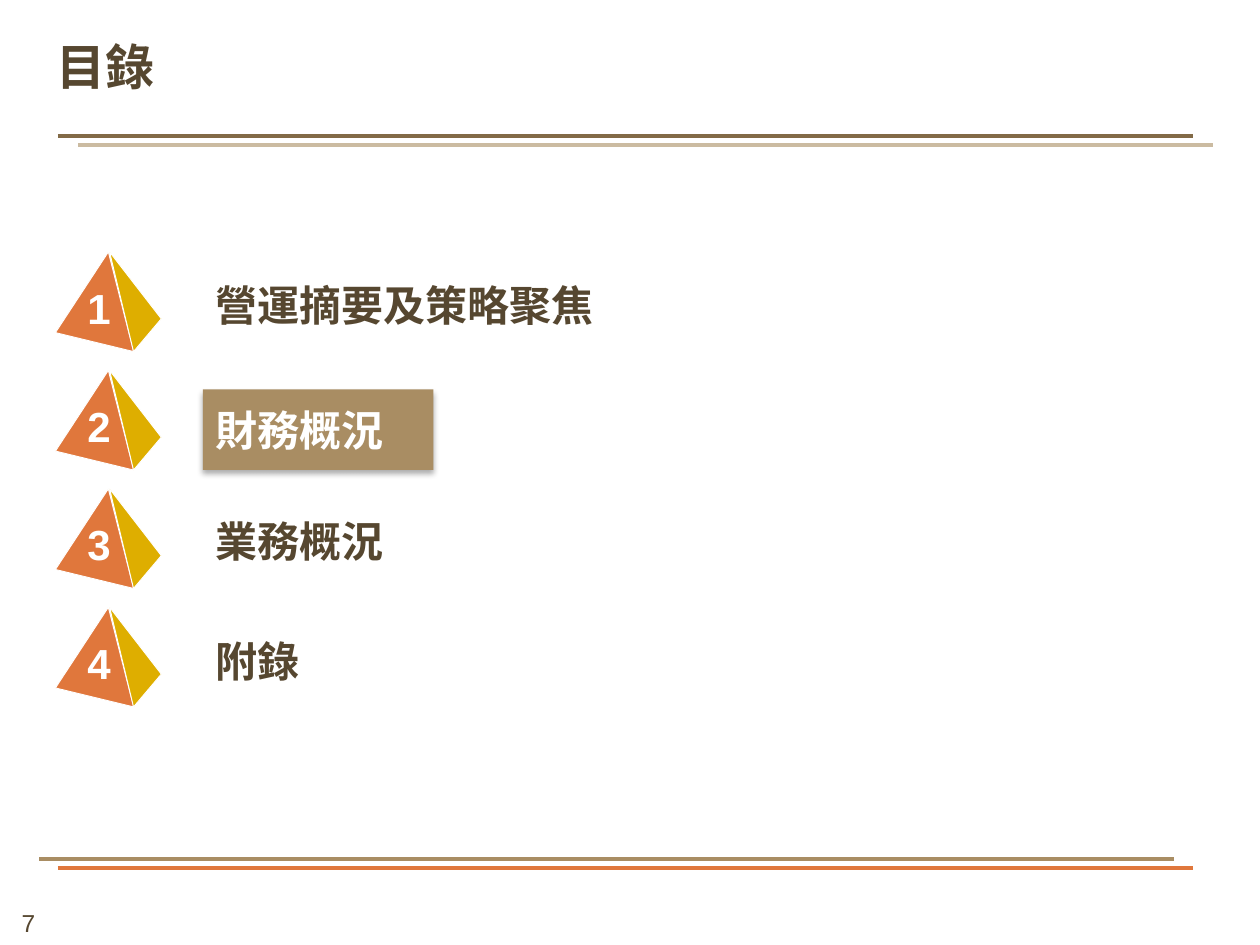
import pptx
import pptx.dml.color
import pptx.enum.shapes
import pptx.enum.text
import pptx.oxml
import pptx.oxml.ns
import pptx.util
from pptx.util import Inches

CJK = "Noto Sans CJK SC"
DARK, TAN, ORANGE, GOLD, WHITE = "564730", "A98D63", "E0773C", "DEAE00", "FFFFFF"
ALIGN = pptx.enum.text.PP_ALIGN
ANCHOR = pptx.enum.text.MSO_ANCHOR
XMLNS = 'xmlns:a="http://schemas.openxmlformats.org/drawingml/2006/main"'
NO_EFFECT = f"<a:effectLst {XMLNS}/>"
SHADOW = (
    f"<a:effectLst {XMLNS}>"
    '<a:outerShdw blurRad="44450" dist="27940" dir="5400000" rotWithShape="0">'
    '<a:srgbClr val="000000"><a:alpha val="32000"/></a:srgbClr>'
    "</a:outerShdw></a:effectLst>"
)


def rgb(color):
    return pptx.dml.color.RGBColor.from_string(color)


def set_text(sp, text, size=24, font=CJK, color=DARK, bold=True, align=ALIGN.LEFT,
             anchor=ANCHOR.MIDDLE, margins=(0.1, 0.05), wrap=True, spacing=None):
    tf = sp.text_frame
    tf.word_wrap = wrap
    tf.auto_size = pptx.enum.text.MSO_AUTO_SIZE.NONE
    tf.vertical_anchor = anchor
    tf.margin_left = tf.margin_right = Inches(margins[0])
    tf.margin_top = tf.margin_bottom = Inches(margins[1])
    p = tf.paragraphs[0]
    p.alignment = align
    p.line_spacing = spacing
    r = p.add_run()
    r.text = text
    r.font.size = pptx.util.Pt(size)
    r.font.name = font
    r.font.bold = bold
    r.font.color.rgb = rgb(color)
    ea = pptx.oxml.parse_xml(f'<a:ea {XMLNS} typeface="{font}"/>')
    r.font._element.find(pptx.oxml.ns.qn("a:latin")).addnext(ea)


def add_text(shapes, text, x, y, w, h, **fmt):
    sp = shapes.add_textbox(Inches(x), Inches(y), Inches(w), Inches(h))
    set_text(sp, text, **fmt)


def add_rule(s, x, y, color):
    sp = s.shapes.add_connector(pptx.enum.shapes.MSO_CONNECTOR.STRAIGHT,
                                Inches(x), Inches(y), Inches(x + 9.01), Inches(y))
    sp.line.color.rgb = rgb(color)
    sp.line.width = pptx.util.Pt(2.25)
    sp._element.spPr.append(pptx.oxml.parse_xml(NO_EFFECT))


def add_face(shapes, points, color):
    start, *rest = [(Inches(x), Inches(y)) for x, y in points]
    builder = shapes.build_freeform(*start)
    builder.add_line_segments(rest, close=True)
    sp = builder.convert_to_shape()
    sp.shadow.inherit = False
    sp.fill.solid()
    sp.fill.fore_color.rgb = rgb(color)
    sp.line.color.rgb = rgb(WHITE)
    sp.line.width = pptx.util.Pt(0.5)


def add_pyramid(s, number, y):
    shapes = s.shapes.add_group_shape().shapes
    add_face(shapes, [(0.86, y), (0.44, y + 0.64), (1.06, y + 0.79)], ORANGE)
    add_face(shapes, [(0.87, y), (1.28, y + 0.53), (1.06, y + 0.79)], GOLD)
    add_text(shapes, str(number), 0.69, y + 0.3, 0.19, 0.34, font="Arial", color=WHITE,
             align=ALIGN.CENTER, margins=(0, 0), wrap=False, spacing=0.85)


def add_highlight(s, text, x, y, w, h):
    sp = s.shapes.add_shape(pptx.enum.shapes.MSO_SHAPE.RECTANGLE,
                            Inches(x), Inches(y), Inches(w), Inches(h))
    sp.fill.solid()
    sp.fill.fore_color.rgb = rgb(TAN)
    sp.line.fill.background()
    sp._element.spPr.append(pptx.oxml.parse_xml(SHADOW))
    set_text(sp, text, color=WHITE)


def add_title(s, text):
    sp = s.shapes.title
    sp.left, sp.top, sp.width, sp.height = map(Inches, (0.45, 0.25, 9.41, 0.51))
    set_text(sp, text, size=28, anchor=ANCHOR.BOTTOM, margins=(0, 0),
             spacing=pptx.util.Pt(40))


def main():
    prs = pptx.Presentation()
    prs.slide_width, prs.slide_height = Inches(10), Inches(7.5)
    s = prs.slides.add_slide(prs.slide_layouts[5])

    add_text(s.shapes, "7", -0.17, 7.16, 0.79, 0.34, size=14, font="Arial", bold=False,
             align=ALIGN.CENTER, anchor=ANCHOR.TOP)
    for x, y, color in [(0.46, 6.89, ORANGE), (0.31, 6.82, TAN),
                        (0.62, 1.15, "CBBBA1"), (0.46, 1.08, "826A47")]:
        add_rule(s, x, y, color)
    add_title(s, "目錄")

    items = [
        (add_text, s.shapes, "營運摘要及策略聚焦", 2.08, 3.31, 0.68),
        (add_highlight, s, "財務概況", 3.09, 1.83, 0.64),
        (add_text, s.shapes, "業務概況", 3.97, 2.42, 0.64),
        (add_text, s.shapes, "附錄", 4.92, 2.42, 0.64),
    ]
    for i, (add, parent, text, y, w, h) in enumerate(items):
        add_pyramid(s, i + 1, 2 + 0.94 * i)
        add(parent, text, 1.61, y, w, h)

    prs.save("out.pptx")


if __name__ == "__main__":
    main()
